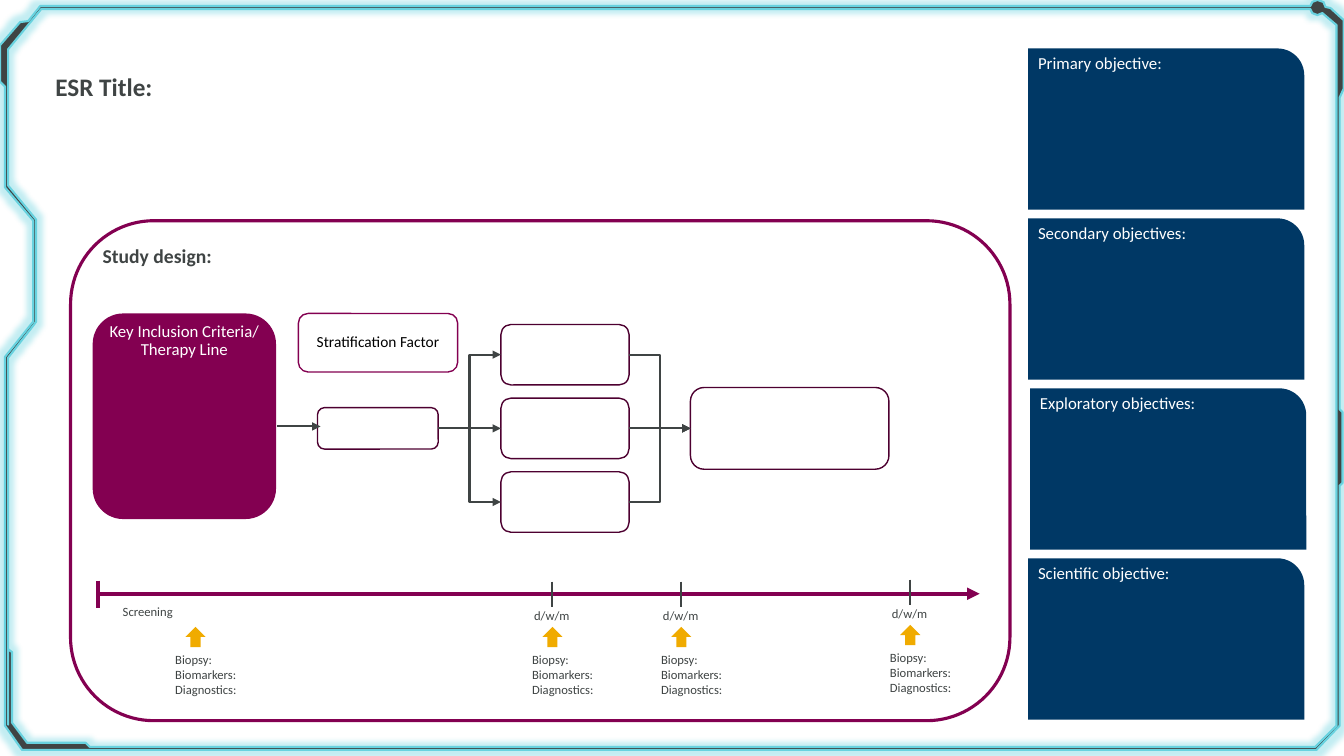
"""Build a study-outline slide with objectives, a study design and a visit timeline."""
from dataclasses import dataclass, field
from typing import Optional

from lxml import etree
from pptx import Presentation
from pptx.dml.color import RGBColor
from pptx.enum.shapes import MSO_CONNECTOR, MSO_SHAPE
from pptx.enum.text import MSO_ANCHOR, MSO_AUTO_SIZE, PP_ALIGN
from pptx.oxml.ns import qn
from pptx.util import Pt

ROUNDED, ONE_ROUND, UP_ARROW = (
    MSO_SHAPE.ROUNDED_RECTANGLE, MSO_SHAPE.ROUND_1_RECTANGLE, MSO_SHAPE.UP_ARROW)
STRAIGHT, ELBOW = MSO_CONNECTOR.STRAIGHT, MSO_CONNECTOR.ELBOW
TOP, MIDDLE = MSO_ANCHOR.TOP, MSO_ANCHOR.MIDDLE
LEFT, CENTER = PP_ALIGN.LEFT, PP_ALIGN.CENTER
LEFT_SIDE, RIGHT_SIDE = 1, 3

GREY, WHITE, BLACK = "3F4444", "FFFFFF", "000000"
PLUM, DARK_PLUM, NAVY, GOLD, CYAN = "830051", "4D0030", "003865", "F0AB00", "68D2DF"

FRAME_OUTER = [
    (956.9, 69.8), (959.8, 63.4), (959.8, 14.4), (950.4, 5.8), (946.8, 5), (945.4, 1.5),
    (941, 0), (937.4, 1.4), (936, 4.3), (28.8, 4.3), (20.2, 15.1), (14.4, 15.8),
    (0, 32.4), (0, 58.3), (3.6, 61.9), (3.6, 133.9), (23.8, 157.7), (23.8, 229.7),
    (3.6, 254.9), (3.6, 518.4), (15.8, 535.7), (940.3, 535.7), (956.9, 518.4),
    (956.9, 347), (959, 344.9), (959, 294.5), (956.9, 292.3)]
FRAME_INNER = [
    (939.6, 533.5), (64.1, 533.5), (61.2, 530.6), (19.4, 530.6), (8.6, 516.2),
    (8.6, 465.8), (5.8, 463.7), (5.8, 517.7), (5.8, 255.6), (23.8, 232.6),
    (25.9, 229.7), (25.9, 157), (5.8, 132.5), (5.8, 35.3), (29.5, 6.5), (936, 6.5),
    (937.4, 9.4), (941, 10.8), (944.6, 9.4), (954.7, 18), (954.7, 518.4)]


@dataclass
class Label:
    lines: list[str]
    size: float
    color: str = GREY
    bold: bool = False
    align: PP_ALIGN = LEFT
    spacing: float = 0.9
    after: float = 6
    frame: dict = field(default_factory=dict)


@dataclass
class Box:
    left: float
    top: float
    width: float
    height: float
    fill: str = WHITE
    line: Optional[str] = DARK_PLUM
    weight: float = 1
    kind: MSO_SHAPE = ROUNDED
    label: Optional[Label] = None


@dataclass
class Visit:
    center: float
    timed: bool = True
    shift: float = 0


OBJECTIVES = [("Primary objective:", 734.4), ("Secondary objectives:", 734.4),
              ("Exploratory objectives:", 735.8), ("Scientific objective:", 734.4)]
VISITS = [Visit(139.7, timed=False), Visit(394.6), Visit(486.7), Visit(650.2, shift=-1.4)]


def rgb(color: str) -> RGBColor:
    return RGBColor.from_string(color)


def write(text_frame, label: Label) -> None:
    settings = {"word_wrap": True, "auto_size": MSO_AUTO_SIZE.NONE,
                "vertical_anchor": TOP, **label.frame}
    for name, value in settings.items():
        setattr(text_frame, name, value)
    for index, line in enumerate(label.lines):
        paragraph = text_frame.paragraphs[0] if index == 0 else text_frame.add_paragraph()
        paragraph.text = line
        layout = {"alignment": label.align, "line_spacing": label.spacing,
                  "space_before": Pt(0), "space_after": Pt(label.after)}
        for name, value in layout.items():
            setattr(paragraph, name, value)
        style = {"name": "Calibri", "size": Pt(label.size), "bold": label.bold}
        for name, value in style.items():
            setattr(paragraph.font, name, value)
        paragraph.font.color.rgb = rgb(label.color)


def add_text(slide, left: float, top: float, width: float, height: float,
             label: Label) -> None:
    box = slide.shapes.add_textbox(Pt(left), Pt(top), Pt(width), Pt(height))
    write(box.text_frame, label)


def paint(shape, fill: str, line: Optional[str], weight: float) -> None:
    shape.shadow.inherit = False
    shape.fill.solid()
    shape.fill.fore_color.rgb = rgb(fill)
    if line:
        shape.line.color.rgb = rgb(line)
        shape.line.width = Pt(weight)
    else:
        shape.line.fill.background()


def add_box(slide, box: Box):
    shape = slide.shapes.add_shape(
        box.kind, Pt(box.left), Pt(box.top), Pt(box.width), Pt(box.height))
    paint(shape, box.fill, box.line, box.weight)
    if box.label:
        write(shape.text_frame, box.label)
    return shape


def add_line(slide, start: tuple[float, float], end: tuple[float, float],
             color: str = GREY, weight: float = 1.5, arrow: bool = False,
             kind: MSO_CONNECTOR = STRAIGHT):
    connector = slide.shapes.add_connector(kind, *map(Pt, start + end))
    connector.line.color.rgb = rgb(color)
    connector.line.width = Pt(weight)
    properties = connector._element.spPr
    if arrow:
        etree.SubElement(properties.find(qn("a:ln")), qn("a:tailEnd"), type="triangle")
    etree.SubElement(properties, qn("a:effectLst"))
    return connector


def join(slide, source, target) -> None:
    connector = add_line(slide, (0, 0), (0, 0), arrow=True, kind=ELBOW)
    connector.begin_connect(source, RIGHT_SIDE)
    connector.end_connect(target, LEFT_SIDE)


def add_frame(slide) -> None:
    outer, inner = ([(Pt(x), Pt(y)) for x, y in outline]
                    for outline in (FRAME_OUTER, FRAME_INNER))
    builder = slide.shapes.build_freeform(*outer[0])
    builder.add_line_segments(outer[1:], close=True)
    builder.move_to(*inner[0])
    builder.add_line_segments(inner[1:], close=True)
    frame = builder.convert_to_shape()
    paint(frame, GREY, CYAN, 1.5)
    effects = frame._element.spPr.find(qn("a:effectLst"))
    glow = etree.SubElement(effects, qn("a:glow"), rad=str(Pt(8)))
    tint = etree.SubElement(glow, qn("a:srgbClr"), val=CYAN)
    etree.SubElement(tint, qn("a:alpha"), val="40000")


def add_objectives(slide) -> None:
    for row, (heading, left) in enumerate(OBJECTIVES):
        label = Label([heading], 12, WHITE, frame={"margin_top": Pt(5)})
        add_box(slide, Box(left, 34.6 + 121.4 * row, 197.3, 115.2, NAVY, None,
                           kind=ONE_ROUND, label=label))


def add_design(slide) -> None:
    add_box(slide, Box(50.4, 157.7, 671, 357.1, line=PLUM, weight=2.25))
    add_text(slide, 66.2, 162.7, 99.4, 41.8,
             Label(["Study design:"], 14, bold=True, spacing=0.95,
                   frame={"vertical_anchor": MIDDLE}))
    criteria = Label(["Key Inclusion Criteria/", "Therapy Line"], 12, WHITE,
                     align=CENTER, spacing=0.5,
                     frame={"margin_left": 0, "margin_right": 0, "margin_top": Pt(5)})
    add_box(slide, Box(66.2, 223.9, 131, 146.9, PLUM, None, label=criteria))
    factor = Label(["Stratification Factor"], 11, BLACK, align=CENTER,
                   frame={"vertical_anchor": MIDDLE})
    add_box(slide, Box(213.1, 223.9, 113.8, 41.8, line=PLUM, label=factor))
    allocation = add_box(slide, Box(226.8, 291.2, 86.2, 29.6))
    outcome = add_box(slide, Box(493.2, 276.8, 141.8, 58.4))
    for row in range(3):
        arm = add_box(slide, Box(357.8, 231.8 + 52.6 * row, 91.6, 43.2))
        join(slide, allocation, arm)
        join(slide, arm, outcome)
    add_line(slide, (198, 304.6), (229, 304.6), arrow=True)


def add_timeline(slide) -> None:
    add_line(slide, (69.8, 424.1), (699.8, 424.1), PLUM, 3, arrow=True)
    add_line(slide, (69.8, 414.7), (69.8, 434.2), PLUM, 3)
    add_text(slide, 80.6, 429.1, 54, 17.3, Label(["Screening"], 9))
    samples = Label(["Biopsy:", "Biomarkers:", "Diagnostics:"], 9, spacing=1, after=0)
    for visit in VISITS:
        x, shift = visit.center, visit.shift
        if visit.timed:
            add_line(slide, (x, 415.4 + shift), (x, 433.4 + shift))
            add_text(slide, x - 20.2, 432 + shift, 44, 17.3, Label(["d/w/m"], 9))
        add_box(slide, Box(x - 7.2, 447.8 + shift, 14.4, 14.4, GOLD, None, kind=UP_ARROW))
        add_text(slide, x - 21.6, 462.2 + shift, 64, 40.3, samples)


def main() -> None:
    deck = Presentation()
    deck.slide_width, deck.slide_height = Pt(960), Pt(540)
    slide = deck.slides.add_slide(deck.slide_layouts[5])
    title = slide.shapes.title
    place = {"left": 32.4, "top": 49.7, "width": 90, "height": 25.9}
    for name, value in place.items():
        setattr(title, name, Pt(value))
    write(title.text_frame, Label(["ESR Title:"], 18, bold=True, spacing=0.95,
                                  frame={"vertical_anchor": MIDDLE}))
    add_frame(slide)
    add_objectives(slide)
    add_design(slide)
    add_timeline(slide)
    deck.save("out.pptx")


if __name__ == "__main__":
    main()
